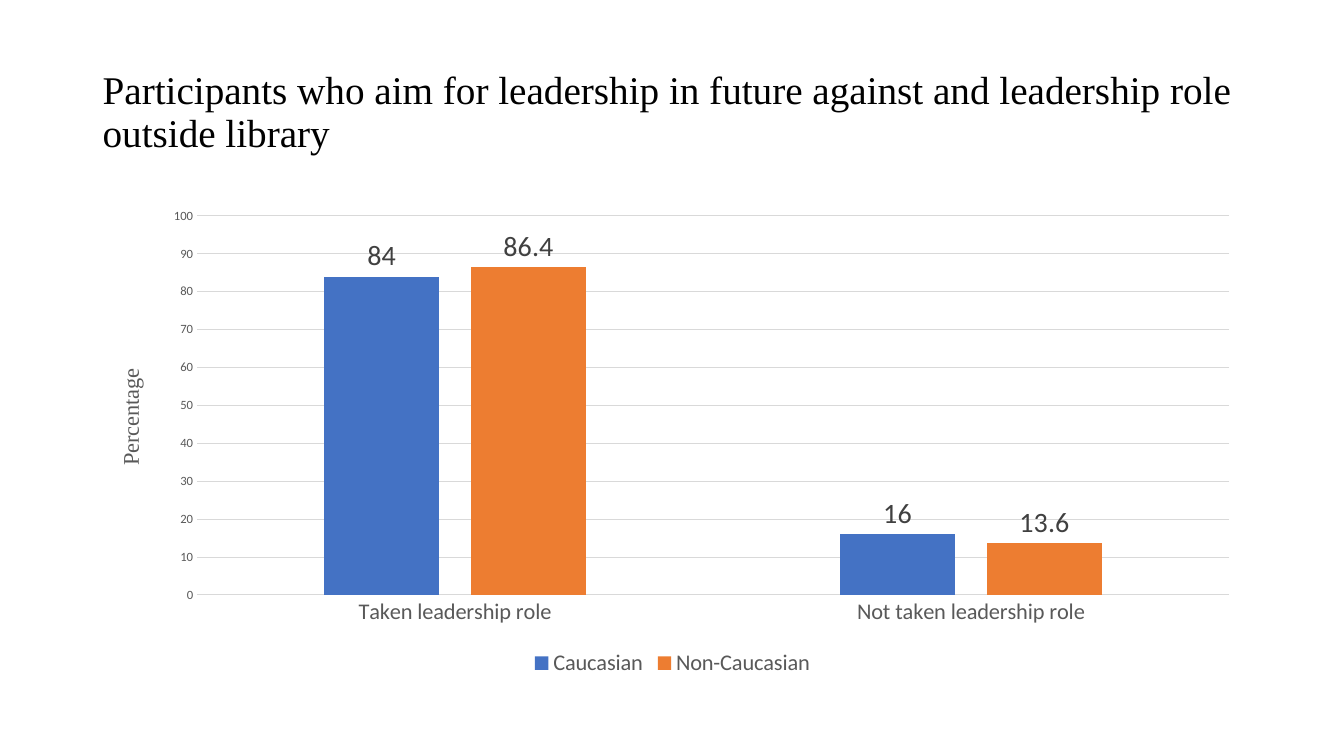
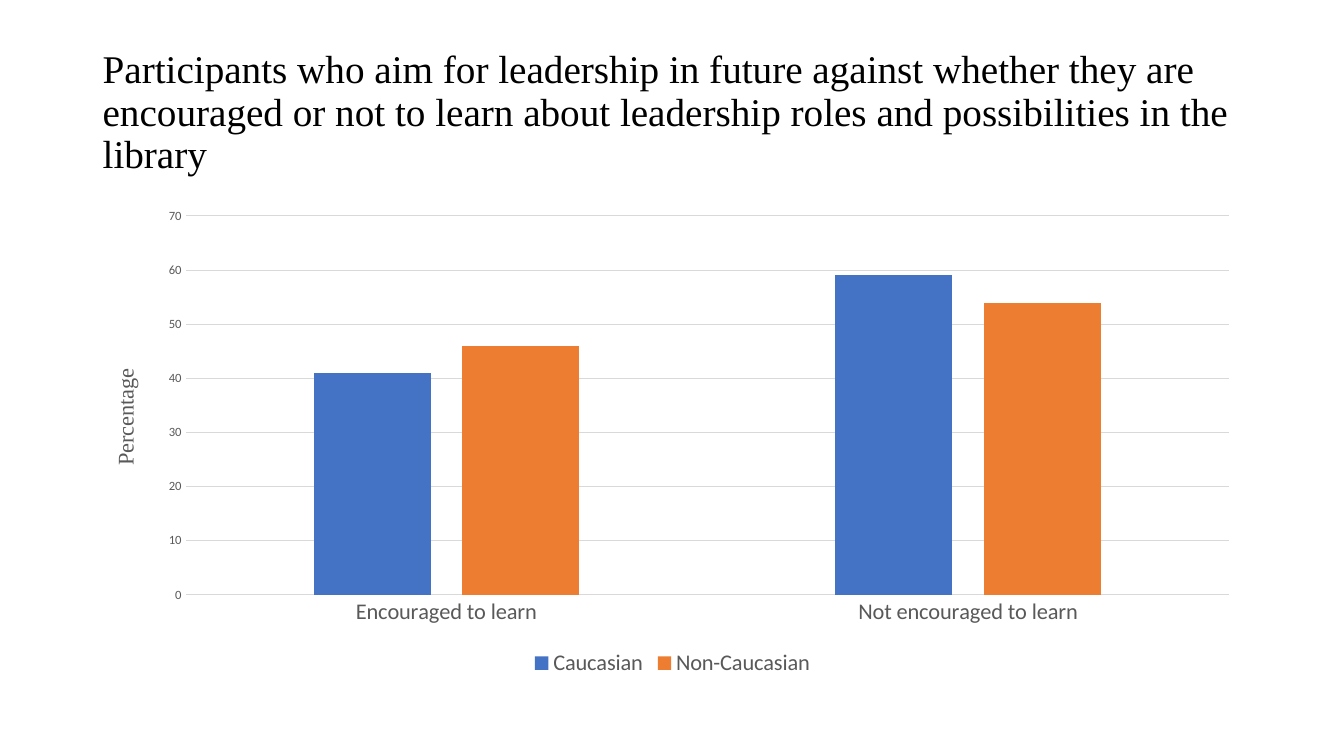
"""Build two slides comparing leadership answers in clustered column charts."""
from lxml.etree import SubElement
from pptx import Presentation
from pptx.chart.data import CategoryChartData
from pptx.dml.color import RGBColor
from pptx.enum.chart import XL_CHART_TYPE, XL_LABEL_POSITION, XL_LEGEND_POSITION, XL_TICK_MARK
from pptx.enum.text import MSO_ANCHOR
from pptx.oxml.ns import qn
from pptx.util import Inches, Pt

BLACK = RGBColor(0x00, 0x00, 0x00)
DARK_GRAY = RGBColor(0x40, 0x40, 0x40)
GRAY = RGBColor(0x59, 0x59, 0x59)
LIGHT_GRAY = RGBColor(0xD9, 0xD9, 0xD9)
GROUP_COLORS = {
    "Caucasian": RGBColor(0x44, 0x72, 0xC4),
    "Non-Caucasian": RGBColor(0xED, 0x7D, 0x31),
}
SERIF, SANS = "Times New Roman", "Calibri"
MARGIN, CONTENT_WIDTH = Inches(0.92), Inches(11.5)
TITLE_TOP, TITLE_HEIGHT = Inches(0.4), Inches(1.45)
CHART_TOP, CHART_HEIGHT = Inches(2), Inches(4.76)
PLOT_RIGHT, PLOT_TOP, PLOT_HEIGHT = 0.98, 0.03, 0.79

SLIDES = [
    {
        "title": "Participants who aim for leadership in future against and leadership role outside library",
        "answers": ["Taken leadership role", "Not taken leadership role"],
        "percentages": [(84, 16), (86.4, 13.6)],
        "maximum": 100,
        "plot_left": 0.09,
        "labelled": True,
    },
    {
        "title": "Participants who aim for leadership in future against whether they are encouraged "
                 "or not to learn about leadership roles and possibilities in the library",
        "answers": ["Encouraged to learn", "Not encouraged to learn"],
        "percentages": [(41, 59), (46, 54)],
        "maximum": 70,
        "plot_left": 0.08,
        "labelled": False,
    },
]


def style_font(font, size, color, name=SANS):
    font.size, font.name, font.bold = Pt(size), name, False
    font.color.rgb = color


def style_line(line):
    line.color.rgb = LIGHT_GRAY
    line.width = Pt(0.75)


def add_title(slide, wording):
    frame = slide.shapes.add_textbox(MARGIN, TITLE_TOP, CONTENT_WIDTH, TITLE_HEIGHT).text_frame
    frame.word_wrap = True
    frame.vertical_anchor = MSO_ANCHOR.MIDDLE
    paragraph = frame.paragraphs[0]
    paragraph.line_spacing = 0.9
    run = paragraph.add_run()
    run.text = wording
    style_font(run.font, 28, BLACK, SERIF)


def place_plot(chart, left):
    plot_area = chart.plots[0]._element.getparent()
    layout = plot_area.find(qn("c:layout"))
    if layout is None:
        layout = SubElement(plot_area, qn("c:layout"))
        plot_area.insert(0, layout)
    manual = SubElement(layout, qn("c:manualLayout"))
    settings = [("layoutTarget", "inner"), ("xMode", "edge"), ("yMode", "edge"),
                ("x", left), ("y", PLOT_TOP),
                ("w", round(PLOT_RIGHT - left, 2)), ("h", PLOT_HEIGHT)]
    for tag, value in settings:
        SubElement(manual, qn(f"c:{tag}")).set("val", str(value))


def style_axes(chart, maximum):
    answers, percentage = chart.category_axis, chart.value_axis
    for axis, size in ((answers, 16), (percentage, 9)):
        axis.major_tick_mark = axis.minor_tick_mark = XL_TICK_MARK.NONE
        style_font(axis.tick_labels.font, size, GRAY)
    style_line(answers.format.line)
    percentage.format.line.fill.background()
    percentage.minimum_scale, percentage.maximum_scale = 0, maximum
    percentage.major_unit = 10
    style_line(percentage.major_gridlines.format.line)
    run = percentage.axis_title.text_frame.paragraphs[0].add_run()
    run.text = "Percentage"
    style_font(run.font, 16, GRAY, SERIF)


def add_labels(series):
    labels = series.data_labels
    labels.show_value = True
    labels.position = XL_LABEL_POSITION.OUTSIDE_END
    style_font(labels.font, 20, DARK_GRAY)


def add_column_chart(slide, content):
    data = CategoryChartData()
    data.categories = content["answers"]
    for group, values in zip(GROUP_COLORS, content["percentages"]):
        data.add_series(group, values)
    chart = slide.shapes.add_chart(XL_CHART_TYPE.COLUMN_CLUSTERED, MARGIN, CHART_TOP,
                                   CONTENT_WIDTH, CHART_HEIGHT, data).chart
    style_font(chart.font, 10, BLACK)
    chart.has_title = False
    chart.has_legend = True
    chart.legend.position = XL_LEGEND_POSITION.BOTTOM
    chart.legend.include_in_layout = False
    style_font(chart.legend.font, 16, GRAY)
    style_axes(chart, content["maximum"])
    columns = chart.plots[0]
    columns.gap_width, columns.overlap = 219, -27
    columns.vary_by_categories = False
    for series in columns.series:
        series.format.fill.solid()
        series.format.fill.fore_color.rgb = GROUP_COLORS[series.name]
        if content["labelled"]:
            add_labels(series)
    place_plot(chart, content["plot_left"])


def main():
    deck = Presentation()
    deck.slide_width, deck.slide_height = Inches(13.33), Inches(7.5)
    for content in SLIDES:
        slide = deck.slides.add_slide(deck.slide_layouts[6])
        add_title(slide, content["title"])
        add_column_chart(slide, content)
    deck.save("out.pptx")


if __name__ == "__main__":
    main()
